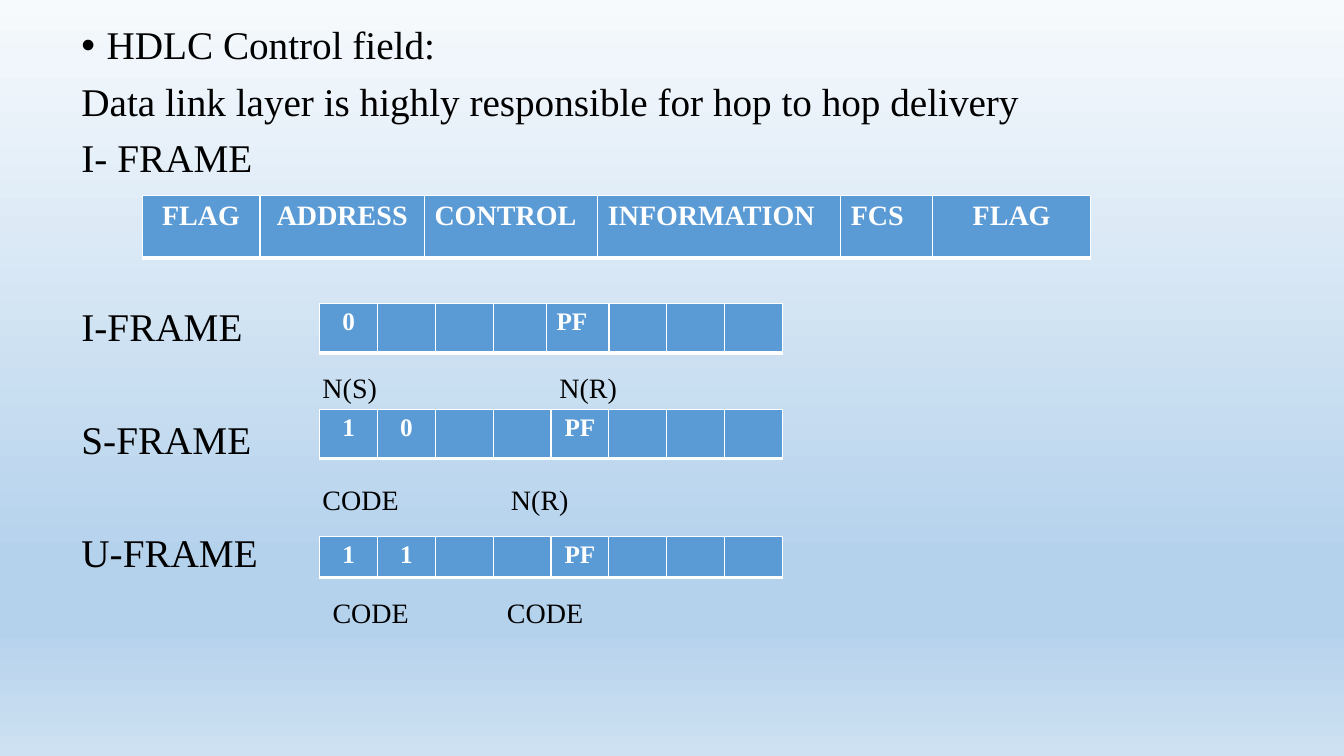
from lxml import etree
from pptx import Presentation, oxml
from pptx import util as u
from pptx.dml.color import RGBColor
from pptx.enum import text
from pptx.oxml.ns import qn

COLORS = {"ink": "000000", "white": "FFFFFF", "cell": "5B9BD5"}
SKY = {0: "F7FAFD", 8: "F0F6FB", 74: "B5D2EC", 83: "B5D2EC", 100: "CEE1F2"}
BORDERS = {"lnL": 1, "lnT": 1, "lnR": 1, "lnB": 3}
A_NS = "http://schemas.openxmlformats.org/drawingml/2006/main"


def write(paragraph, words, size, color, bold=False):
    run = paragraph.add_run()
    run.text = words
    font_format = {"name": "Times New Roman", "size": u.Pt(size), "bold": bold}
    for key, value in font_format.items():
        setattr(run.font, key, value)
    run.font.color.rgb = RGBColor.from_string(COLORS[color])


def border(cell):
    props = cell._tc.get_or_add_tcPr()
    for place, side in enumerate(("lnL", "lnR", "lnT", "lnB")):
        props.insert(place, oxml.parse_xml(
            f'<a:{side} xmlns:a="{A_NS}" w="{u.Pt(BORDERS[side])}"><a:solidFill>'
            f'<a:srgbClr val="{COLORS["white"]}"/></a:solidFill></a:{side}>'))


prs = Presentation()
prs.slide_width, prs.slide_height = u.Inches(13.33), u.Inches(7.5)
slide = prs.slides.add_slide(prs.slide_layouts[6])

sky = slide.background.fill
sky.gradient()
sky.gradient_angle = 270
stops = slide._element.find(".//" + qn("a:gsLst"))
for stop in list(stops):
    stops.remove(stop)
for percent, shade in SKY.items():
    stop = etree.SubElement(stops, qn("a:gs"), pos=str(percent * 1000))
    etree.SubElement(stop, qn("a:srgbClr"), val=shade)

body = slide.shapes.add_textbox(
    u.Inches(0.71), u.Inches(0.21), u.Inches(11.5), u.Inches(6.3)).text_frame
body.word_wrap = True
LINES = [
    ("HDLC Control field:", 10, []),
    ("Data link layer is highly responsible for hop to hop delivery", 10, []),
    ("I- FRAME", 10, []),
    ("I-FRAME", 90.5, []),
    ("", 10, [("N(S)", 3.2), ("N(R)", 5.55)]),
    ("S-FRAME", 10, []),
    ("", 10, [("CODE", 3.2), ("N(R)", 5.07)]),
    ("U-FRAME", 10, []),
    ("", 10, [("CODE", 3.3), ("CODE", 5.03)]),
]
for number, (words, gap, field_labels) in enumerate(LINES):
    line = body.add_paragraph() if number else body.paragraphs[0]
    for key, value in {"line_spacing": 0.9, "space_before": u.Pt(gap)}.items():
        setattr(line, key, value)
    props = line._p.get_or_add_pPr()
    if number == 0:
        props.set("marL", str(u.Inches(0.25)))
        props.set("indent", str(-u.Inches(0.25)))
        etree.SubElement(props, qn("a:buFont"), typeface="Arial")
        etree.SubElement(props, qn("a:buChar"), char="•")
    if words:
        write(line, words, 28, "ink")
    if field_labels:
        tabs = etree.SubElement(props, qn("a:tabLst"))
    for label, left in field_labels:
        etree.SubElement(tabs, qn("a:tab"), pos=str(u.Inches(left - 0.81)), algn="l")
        write(line, "\t", 28, "ink")
        write(line, label, 20, "ink")

CENTER, LEFT = text.PP_ALIGN.CENTER, text.PP_ALIGN.LEFT
EIGHT_BITS = [0.574] * 8
FRAMES = [
    (1.41, 1.94, 0.62, 20, [1.17, 1.63, 1.72, 2.41, 0.91, 1.57],
     ["FLAG", "ADDRESS", "CONTROL", "INFORMATION", "FCS", "FLAG"], {2, 3, 4}),
    (3.17, 3.01, 0.49, 18, [0.574] * 3 + [0.53, 0.62] + [0.574] * 3,
     ["0", "", "", "", "PF", "", "", ""], {4}),
    (3.17, 4.06, 0.49, 18, EIGHT_BITS, ["1", "0", "", "", "PF", "", "", ""], set()),
    (3.17, 5.32, 0.41, 18, EIGHT_BITS, ["1", "1", "", "", "PF", "", "", ""], set()),
]
for left, top, height, size, widths, fields, left_aligned in FRAMES:
    frame = slide.shapes.add_table(
        1, len(fields), u.Inches(left), u.Inches(top),
        u.Inches(sum(widths)), u.Inches(height)).table
    for column, (width, field) in enumerate(zip(widths, fields)):
        frame.columns[column].width = u.Inches(width)
        cell = frame.cell(0, column)
        cell.fill.solid()
        cell.fill.fore_color.rgb = RGBColor.from_string(COLORS["cell"])
        border(cell)
        entry = cell.text_frame.paragraphs[0]
        entry.alignment = LEFT if column in left_aligned else CENTER
        if field:
            write(entry, field, size, "white", True)
        else:
            entry.font.size = u.Pt(size)

prs.save("out.pptx")
